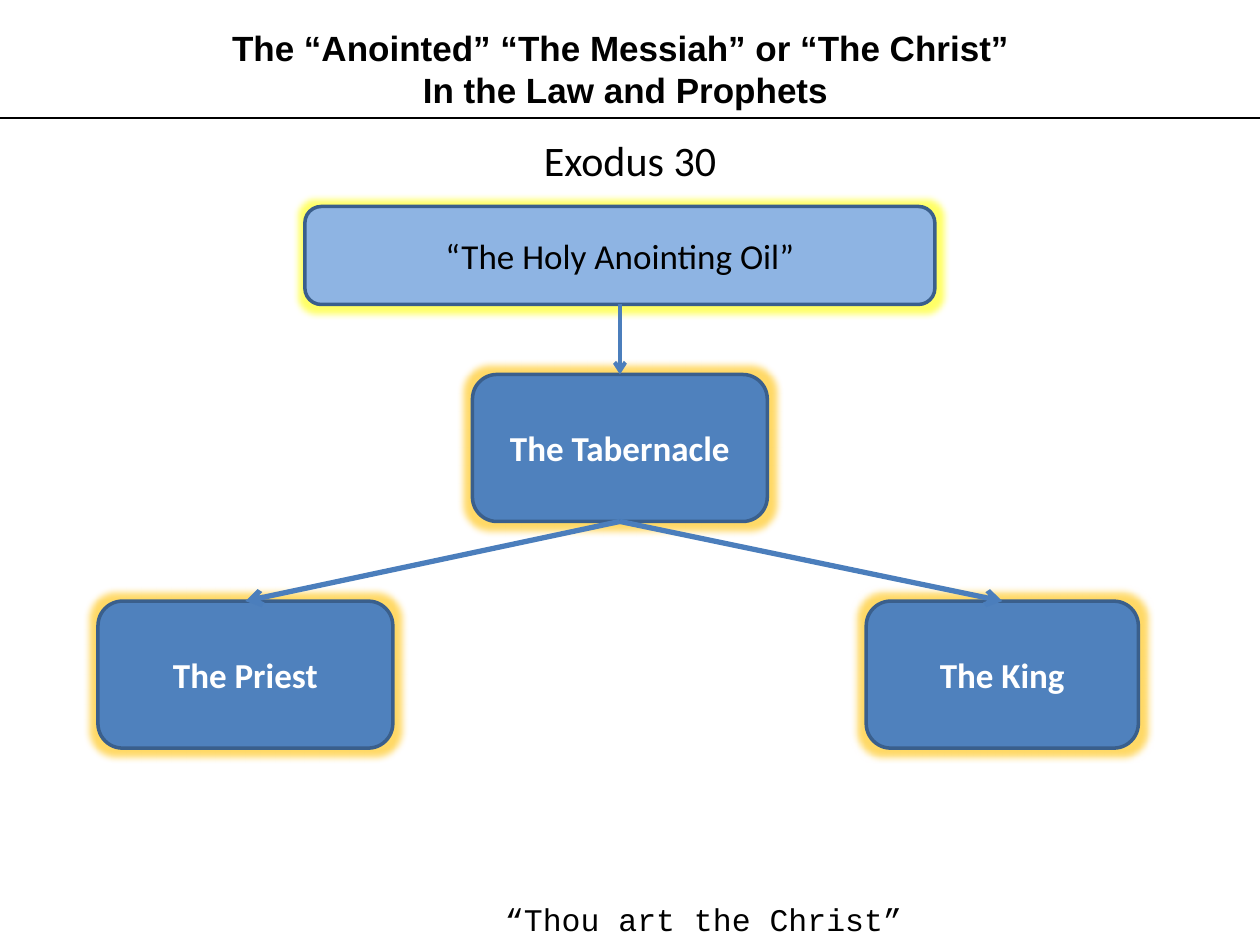
import dataclasses

import lxml.etree
import pptx
import pptx.dml.color
import pptx.enum.shapes
import pptx.enum.text
import pptx.oxml.ns
import pptx.util

Pt = pptx.util.Pt
SHAPE = pptx.enum.shapes.MSO_SHAPE
CONNECTOR = pptx.enum.shapes.MSO_CONNECTOR
ALIGN = pptx.enum.text.PP_ALIGN
ANCHOR = pptx.enum.text.MSO_ANCHOR
TOP_SITE, BOTTOM_SITE = 0, 2


@dataclasses.dataclass(frozen=True)
class Theme:
    ink: str = "000000"
    white: str = "FFFFFF"
    blue: str = "4F81BD"
    light_blue: str = "8EB4E3"
    outline: str = "3A5F8C"
    arrow: str = "4B7EBC"
    yellow: str = "FFFF00"
    gold: str = "FFC000"
    body_font: str = "Calibri"
    title_font: str = "Arial"
    verse_font: str = "Courier New"
    verse_size: float = 18
    label_size: float = 20
    heading_size: float = 24


def rgb(color):
    return pptx.dml.color.RGBColor.from_string(color)


def add_element(parent, tag, **attributes):
    return lxml.etree.SubElement(parent, pptx.oxml.ns.qn(tag), attributes)


def write_text(frame, text, *, font, size, color, bold=False, align=ALIGN.CENTER):
    for index, line in enumerate(text.split("\n")):
        para = frame.add_paragraph() if index else frame.paragraphs[0]
        para.alignment = align
        span = para.add_run()
        span.text = line
        span.font.name = font
        span.font.size = Pt(size)
        span.font.bold = bold
        span.font.color.rgb = rgb(color)


class SlideBuilder:
    def __init__(self, page, theme):
        self.page = page
        self.theme = theme

    def text(self, content, left, top, width, height, *, wrap=True, **style):
        box = self.page.shapes.add_textbox(Pt(left), Pt(top), Pt(width), Pt(height))
        box.text_frame.word_wrap = wrap
        write_text(box.text_frame, content, **style)

    def card(self, label, left, top, width, height, *, fill, glow, color, bold):
        box = self.page.shapes.add_shape(
            SHAPE.ROUNDED_RECTANGLE, Pt(left), Pt(top), Pt(width), Pt(height))
        box.fill.solid()
        box.fill.fore_color.rgb = rgb(fill)
        box.line.color.rgb = rgb(self.theme.outline)
        box.line.width = Pt(2)
        box.shadow.inherit = False
        effects = box._element.spPr.find(pptx.oxml.ns.qn("a:effectLst"))
        halo = add_element(effects, "a:glow", rad=str(Pt(8)))
        tint = add_element(halo, "a:srgbClr", val=glow)
        add_element(tint, "a:alpha", val="60000")
        box.text_frame.word_wrap = True
        box.text_frame.vertical_anchor = ANCHOR.MIDDLE
        write_text(box.text_frame, label, font=self.theme.body_font,
                   size=self.theme.label_size, color=color, bold=bold)
        return box

    def line(self, start, end, *, color, width):
        line = self.page.shapes.add_connector(
            CONNECTOR.STRAIGHT, *(Pt(value) for value in (*start, *end)))
        line.line.color.rgb = rgb(color)
        line.line.width = Pt(width)
        add_element(line._element.spPr, "a:effectLst")
        return line

    def arrow(self, source, target, *, width):
        line = self.line((0, 0), (0, 0), color=self.theme.arrow, width=width)
        line.begin_connect(source, BOTTOM_SITE)
        line.end_connect(target, TOP_SITE)
        add_element(line.line._get_or_add_ln(), "a:tailEnd", type="arrow")


def main():
    deck = pptx.Presentation()
    deck.slide_width, deck.slide_height = Pt(720), Pt(540)
    page = deck.slides.add_slide(deck.slide_layouts[6])
    theme = Theme()
    slide = SlideBuilder(page, theme)

    slide.text("“Thou art the Christ”", 281.5, 511, 360, 29, font=theme.verse_font,
               size=theme.verse_size, color=theme.ink, align=ALIGN.LEFT)
    slide.text("The “Anointed” “The Messiah” or “The Christ” \nIn the Law and Prophets",
               123.5, 11.5, 468, 55.5, wrap=False, font=theme.title_font,
               size=theme.label_size, color=theme.ink, bold=True)
    slide.line((0, 67.5), (720, 67.5), color=theme.ink, width=0.75)
    slide.text("Exodus 30", 62, 73.5, 596, 36, font=theme.body_font,
               size=theme.heading_size, color=theme.ink)

    axis = 354.25
    oil_width = 360
    card_width, card_height = 168.5, 84
    office_top = 343.5

    oil = slide.card("“The Holy Anointing Oil”", axis - oil_width / 2, 118, oil_width, 56,
                     fill=theme.light_blue, glow=theme.yellow, color=theme.ink, bold=False)
    tabernacle, priest, king = (
        slide.card(label, left, top, width, card_height, fill=theme.blue,
                   glow=theme.gold, color=theme.white, bold=True)
        for label, left, top, width in (
            ("The Tabernacle", axis - card_width / 2, 214, card_width),
            ("The Priest", 56, office_top, card_width),
            ("The King", 495, office_top, 155.5),
        )
    )

    slide.arrow(oil, tabernacle, width=2.25)
    for office in (priest, king):
        slide.arrow(tabernacle, office, width=3)

    deck.save("out.pptx")


if __name__ == "__main__":
    main()
